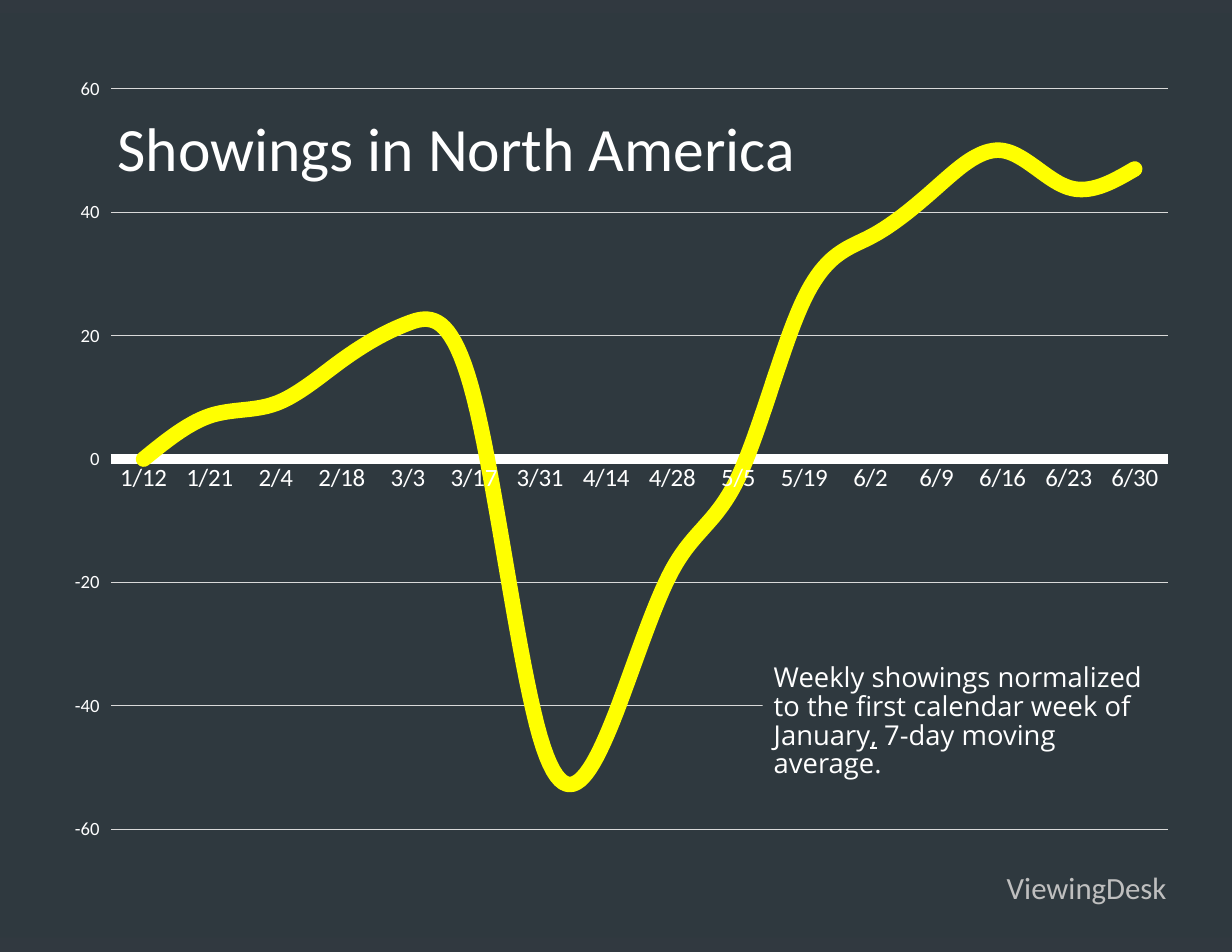
"""Build a slide with a smooth line chart of weekly showings."""
from dataclasses import dataclass

from lxml import etree
from pptx import Presentation
from pptx.chart.data import CategoryChartData
from pptx.dml.color import RGBColor
from pptx.enum import chart as ce, shapes, text
from pptx.oxml import ns
from pptx.util import Inches, Pt

PANEL, WHITE, YELLOW = "2F393F", "FFFFFF", "FFFF00"
DATES = ("1/12 1/21 2/4 2/18 3/3 3/17 3/31 4/14 4/28 5/5 "
         "5/19 6/2 6/9 6/16 6/23 6/30").split()
VALUES = [0, 7, 9, 16, 22, 10, -45, -45, -18, -3, 26, 36, 44, 50, 44, 47]


@dataclass
class Box:
    left: float
    top: float
    width: float
    height: float

    def emu(self) -> tuple:
        return tuple(map(Inches, (self.left, self.top, self.width, self.height)))


@dataclass
class Label:
    box: Box
    words: str
    size: float
    font: str = "Calibri"
    color: str = WHITE
    fill: str = ""
    wrap: bool = True
    pitch: float = 1.0


def rgb(code: str) -> RGBColor:
    return RGBColor.from_string(code)


def paint(shape, code: str) -> None:
    shape.fill.solid()
    shape.fill.fore_color.rgb = rgb(code)


def style(font, size: float, code: str, name: str = "Calibri") -> None:
    font.size, font.name, font.bold = Pt(size), name, False
    font.color.rgb = rgb(code)


def stroke(line, code: str, width: float) -> None:
    line.color.rgb = rgb(code)
    line.width = Pt(width)


def write(shape, label: Label) -> None:
    shape.left, shape.top, shape.width, shape.height = label.box.emu()
    if label.fill:
        paint(shape, label.fill)
    frame = shape.text_frame
    frame.text = label.words
    frame.word_wrap = label.wrap
    frame.auto_size = text.MSO_AUTO_SIZE.SHAPE_TO_FIT_TEXT
    frame.vertical_anchor = text.MSO_ANCHOR.TOP
    for para in frame.paragraphs:
        para.alignment = text.PP_ALIGN.LEFT
        para.line_spacing = label.pitch
        for run in para.runs:
            style(run.font, label.size, label.color, label.font)


def add_label(slide, label: Label):
    shape = slide.shapes.add_textbox(*label.box.emu())
    write(shape, label)
    return shape


def set_plot(chart, box: Box) -> None:
    area = chart._chartSpace.find(".//" + ns.qn("c:plotArea"))
    for old in area.findall(ns.qn("c:layout")):
        area.remove(old)
    layout = etree.Element(ns.qn("c:layout"))
    manual = etree.SubElement(layout, ns.qn("c:manualLayout"))
    parts = {"layoutTarget": "inner", "xMode": "edge", "yMode": "edge",
             "x": box.left, "y": box.top, "w": box.width, "h": box.height}
    for key, val in parts.items():
        etree.SubElement(manual, ns.qn("c:" + key), val=str(val))
    area.insert(0, layout)


def add_graph(slide, box: Box) -> None:
    data = CategoryChartData()
    data.categories = DATES
    data.add_series("Series 1", VALUES)
    chart = slide.shapes.add_chart(ce.XL_CHART_TYPE.LINE, *box.emu(), data).chart
    chart.has_legend = chart.has_title = False
    style(chart.font, 10, "000000")
    set_plot(chart, Box(0.05, 0.03, 0.93, 0.93))

    dates = chart.category_axis
    dates.major_tick_mark = ce.XL_TICK_MARK.NONE
    style(dates.tick_labels.font, 16, WHITE)
    stroke(dates.format.line, WHITE, 6)

    scale = chart.value_axis
    scale.minimum_scale, scale.maximum_scale, scale.major_unit = -60, 60, 20
    scale.major_tick_mark = ce.XL_TICK_MARK.OUTSIDE
    style(scale.tick_labels.font, 12, WHITE)
    scale.format.line.fill.background()
    stroke(scale.major_gridlines.format.line, "D9D9D9", 0.75)

    chart.plots[0].vary_by_categories = False
    series = chart.plots[0].series[0]
    series.smooth = True
    series.marker.style = ce.XL_MARKER_STYLE.NONE
    stroke(series.format.line, YELLOW, 10)
    series.format.line._get_or_add_ln().set("cap", "rnd")


def add_note(slide) -> None:
    shape = add_label(slide, Label(
        Box(6.81, 5.88, 3.71, 0.99),
        "Weekly showings normalized\nto the first calendar week of\nJanuary",
        17.6, "Open Sans", fill=PANEL, pitch=0.88))
    last = shape.text_frame.paragraphs[-1]
    for words, under in ((",", True), (" 7-day moving average.", False)):
        run = last.add_run()
        run.text = words
        style(run.font, 17.6, WHITE, "Open Sans")
        run.font.underline = under


def main() -> None:
    deck = Presentation()
    deck.slide_width, deck.slide_height = Inches(11), Inches(8.5)
    slide = deck.slides.add_slide(deck.slide_layouts[5])
    paint(slide.background, "313940")

    panel = slide.shapes.add_shape(
        shapes.MSO_SHAPE.RECTANGLE, *Box(0, 0.12, 11, 8.25).emu())
    paint(panel, PANEL)
    panel.line.fill.background()
    panel.shadow.inherit = False

    add_graph(slide, Box(0.48, 0.58, 10.15, 7.11))
    add_note(slide)

    title = slide.shapes.title
    write(title, Label(Box(0.95, 0.93, 6.51, 0.77),
                       "Showings in North America", 39.6, fill=PANEL))
    title._element.getparent().append(title._element)

    add_label(slide, Label(Box(8.89, 7.71, 1.72, 0.43), "ViewingDesk",
                           19.8, color="BFBFBF", wrap=False))
    deck.save("out.pptx")


if __name__ == "__main__":
    main()
